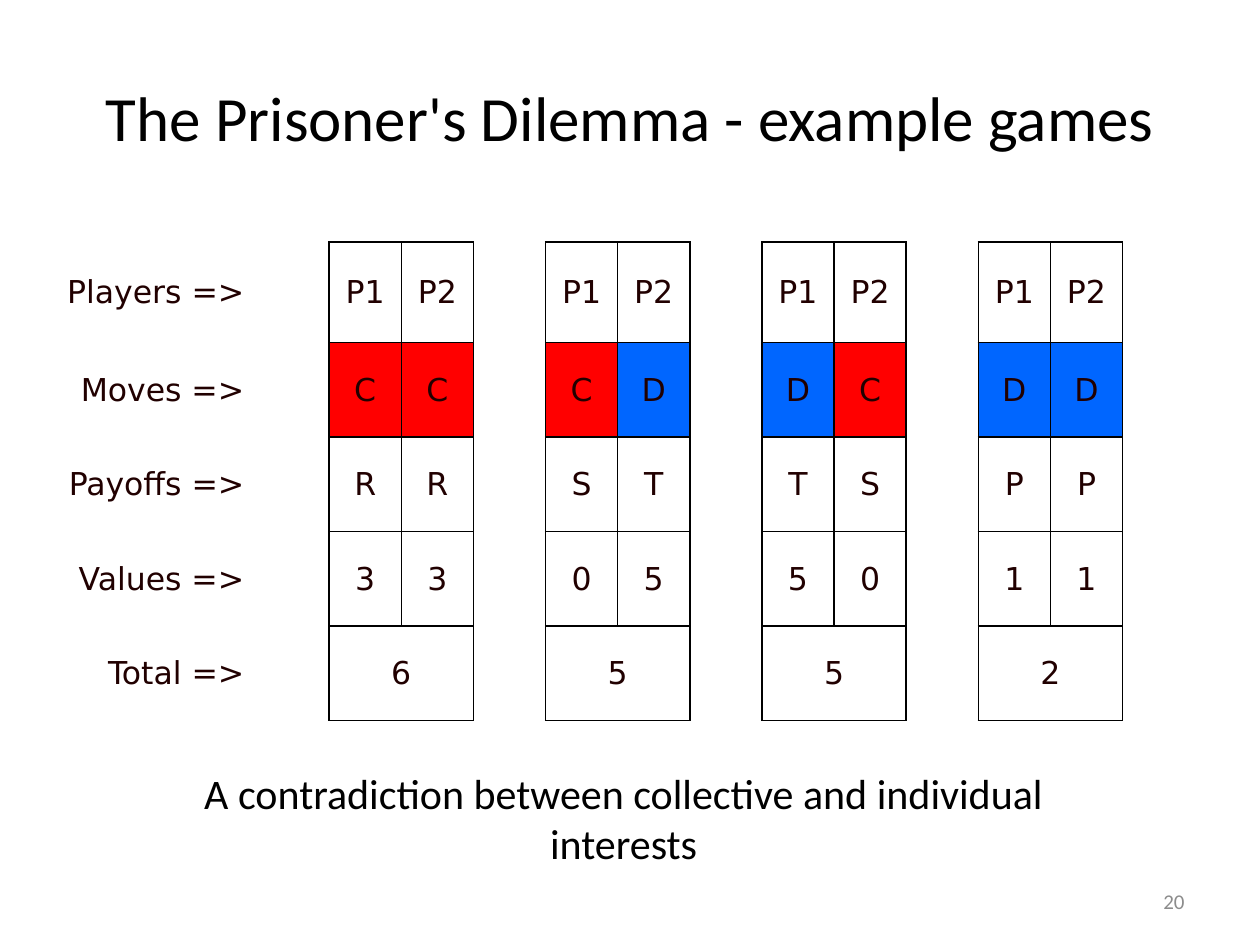
from dataclasses import dataclass

from lxml.etree import SubElement
from pptx import Presentation
from pptx.dml.color import RGBColor
from pptx.enum.text import MSO_ANCHOR, PP_ALIGN
from pptx.oxml.ns import qn
from pptx.util import Inches, Pt


@dataclass(frozen=True)
class Theme:
    heading_font: str = "Calibri"
    table_font: str = "DejaVu Sans"
    black: str = "000000"
    table_text: str = "210000"
    gray: str = "8C8C8C"
    cooperate: str = "FF0000"
    defect: str = "0066FF"
    title_size: int = 36
    caption_size: int = 24
    table_size: int = 18
    number_size: int = 12


theme = Theme()


def write(frame, text, font, size, color, align):
    para = frame.paragraphs[0]
    para.alignment = align
    span = para.add_run()
    span.text = text
    span.font.name = font
    span.font.size = Pt(size)
    span.font.color.rgb = RGBColor.from_string(color)
    return para


def set_borders(cell, sides):
    properties = cell._tc.get_or_add_tcPr()
    for side in "LRTB":
        line = SubElement(properties, qn(f"a:ln{side}"), w=str(Pt(1)))
        if side in sides:
            fill = SubElement(line, qn("a:solidFill"))
            SubElement(fill, qn("a:srgbClr"), val=theme.black)
        else:
            SubElement(line, qn("a:noFill"))


deck = Presentation()
deck.slide_width = Inches(10)
deck.slide_height = Inches(7.5)
page = deck.slides.add_slide(deck.slide_layouts[6])

# Slide number, title and caption
text_boxes = [
    ("20", 7.17, 6.95, 2.33, 0.4, theme.number_size, theme.gray, PP_ALIGN.RIGHT, MSO_ANCHOR.MIDDLE),
    ("The Prisoner's Dilemma - example games", 0.5, 0.35, 9, 1.15,
     theme.title_size, theme.black, PP_ALIGN.CENTER, MSO_ANCHOR.MIDDLE),
    ("A contradiction between collective and individual interests", 1.07, 6.04, 7.76, 0.9,
     theme.caption_size, theme.black, PP_ALIGN.CENTER, MSO_ANCHOR.TOP),
]
for text, left, top, width, height, size, color, align, anchor in text_boxes:
    box = page.shapes.add_textbox(Inches(left), Inches(top), Inches(width), Inches(height))
    frame = box.text_frame
    frame.word_wrap = True
    frame.vertical_anchor = anchor
    if size == theme.title_size:
        frame.margin_left = frame.margin_right = frame.margin_top = frame.margin_bottom = 0
    write(frame, text, theme.heading_font, size, color, align)

# Table contents: one pair of players per game, with a gap column before each game
labels = ["Players =>", "Moves =>", "Payoffs =>", "Values =>", "Total =>"]
games = [
    [("P1", "P2"), ("C", "C"), ("R", "R"), ("3", "3"), ("6", "")],
    [("P1", "P2"), ("C", "D"), ("S", "T"), ("0", "5"), ("5", "")],
    [("P1", "P2"), ("D", "C"), ("T", "S"), ("5", "0"), ("5", "")],
    [("P1", "P2"), ("D", "D"), ("P", "P"), ("1", "1"), ("2", "")],
]
move_fills = {"C": theme.cooperate, "D": theme.defect}
total_row = len(labels) - 1
column_count = 1 + 3 * len(games)

# Table grid
table = page.shapes.add_table(
    len(labels), column_count, Inches(0.25), Inches(1.92), Inches(8.66), Inches(3.8)
).table
table.first_row = table.horz_banding = False
for index, column in enumerate(table.columns):
    column.width = Inches(0.5725 if index else 1.79)
for index, row in enumerate(table.rows):
    row.height = Inches(0.75 if index else 0.8)

# Table cells
for row, label in enumerate(labels):
    texts = [label]
    for game in games:
        texts += ["", *game[row]]
    for column, text in enumerate(texts):
        cell = table.cell(row, column)
        cell.vertical_anchor = MSO_ANCHOR.MIDDLE
        if column == 0:
            set_borders(cell, "")
        elif column % 3 == 1:
            set_borders(cell, "R" if column == 1 else "LR")
        else:
            set_borders(cell, "LRTB")
        if text in move_fills:
            cell.fill.solid()
            cell.fill.fore_color.rgb = RGBColor.from_string(move_fills[text])
        else:
            cell.fill.background()
        if text:
            align = PP_ALIGN.CENTER if column else PP_ALIGN.RIGHT
            para = write(cell.text_frame, text, theme.table_font, theme.table_size,
                         theme.table_text, align)
            para.line_spacing = 1.02
            para.space_before = Pt(6.5)

# Each total spans both players
for column in range(2, column_count, 3):
    table.cell(total_row, column).merge(table.cell(total_row, column + 1))

deck.save("out.pptx")
